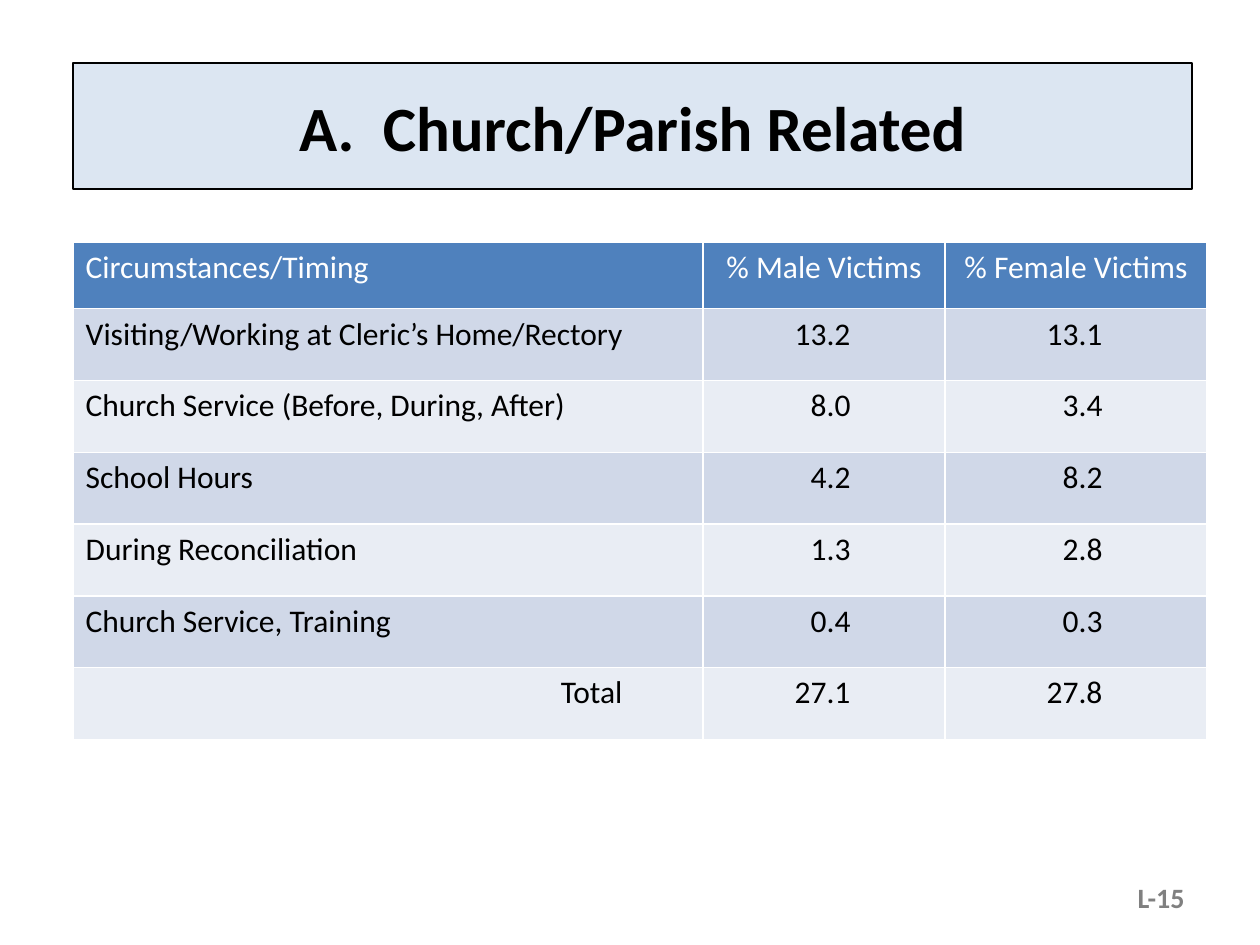
from pptx import Presentation
from pptx.dml.color import RGBColor
from pptx.enum.text import MSO_ANCHOR, PP_ALIGN
from pptx.util import Inches, Pt

LEFT, CENTER, RIGHT = PP_ALIGN.LEFT, PP_ALIGN.CENTER, PP_ALIGN.RIGHT
MIDDLE = MSO_ANCHOR.MIDDLE

FONT = "Calibri"
BLACK, WHITE, GRAY = "000000", "FFFFFF", "808080"
TITLE_FILL, HEADER_FILL = "DCE6F2", "4F81BD"
BAND_FILLS = ("D0D8E8", "E9EDF4")

MARGIN = 0.58
COLUMN_WIDTHS = (5, 1.92, 2.08)
HEADER_HEIGHT, ROW_HEIGHT = 0.53, 0.57
CELL_INSET, TOTAL_INSET = 0.1, 0.64
NUMBER_INSETS = (0.75, 0.83)

HEADERS = ("Circumstances/Timing", "% Male Victims", "% Female Victims")
ROWS = (
    ("Visiting/Working at Cleric’s Home/Rectory", "13.2", "13.1"),
    ("Church Service (Before, During, After)", "8.0", "3.4"),
    ("School Hours", "4.2", "8.2"),
    ("During Reconciliation", "1.3", "2.8"),
    ("Church Service, Training", "0.4", "0.3"),
    ("Total", "27.1", "27.8"),
)


def color(value):
    """Return the colour for a hex string."""
    return RGBColor.from_string(value)


def write(text_frame, text, size, text_color, alignment, bold=False):
    """Fill a text frame with one formatted paragraph."""
    text_frame.text = text
    paragraph = text_frame.paragraphs[0]
    paragraph.alignment = alignment
    paragraph.font.name = FONT
    paragraph.font.size = Pt(size)
    paragraph.font.bold = bold
    paragraph.font.color.rgb = color(text_color)


def format_title(slide, text):
    """Place the title in its outlined box."""
    title = slide.shapes.title
    title.left, title.top = Inches(MARGIN), Inches(0.5)
    title.width, title.height = Inches(8.88), Inches(1)
    title.fill.solid()
    title.fill.fore_color.rgb = color(TITLE_FILL)
    title.line.color.rgb = color(BLACK)
    title.line.width = Pt(1.5)
    title.text_frame.vertical_anchor = MIDDLE
    write(title.text_frame, text, 36, BLACK, CENTER, bold=True)


def fill_cell(cell, text, fill, text_color, alignment, inset=CELL_INSET):
    """Write one table cell with its fill and right inset."""
    cell.fill.solid()
    cell.fill.fore_color.rgb = color(fill)
    cell.margin_right = Inches(inset)
    write(cell.text_frame, text, 18, text_color, alignment)


def add_victims_table(slide):
    """Add the banded table with numbers aligned on their decimals."""
    height = HEADER_HEIGHT + ROW_HEIGHT * len(ROWS)
    table = slide.shapes.add_table(
        len(ROWS) + 1, len(HEADERS), Inches(MARGIN), Inches(1.92),
        Inches(sum(COLUMN_WIDTHS)), Inches(height)).table
    for column, width in zip(table.columns, COLUMN_WIDTHS):
        column.width = Inches(width)
    for row in table.rows:
        row.height = Inches(ROW_HEIGHT)
    table.rows[0].height = Inches(HEADER_HEIGHT)

    for index, header in enumerate(HEADERS):
        alignment = CENTER if index else LEFT
        fill_cell(table.cell(0, index), header, HEADER_FILL, WHITE, alignment)
    for row_index, (label, *numbers) in enumerate(ROWS, start=1):
        fill = BAND_FILLS[(row_index - 1) % 2]
        is_total = row_index == len(ROWS)
        fill_cell(table.cell(row_index, 0), label, fill, BLACK,
                  RIGHT if is_total else LEFT,
                  TOTAL_INSET if is_total else CELL_INSET)
        for index, (number, inset) in enumerate(zip(numbers, NUMBER_INSETS), start=1):
            fill_cell(table.cell(row_index, index), number, fill, BLACK, RIGHT, inset)


def add_page_label(slide, text):
    """Add the page label at the bottom right."""
    box = slide.shapes.add_textbox(Inches(7.17), Inches(6.92), Inches(2.33), Inches(0.4))
    box.text_frame.word_wrap = True
    box.text_frame.vertical_anchor = MIDDLE
    write(box.text_frame, text, 16, GRAY, RIGHT, bold=True)


def main():
    """Build the slide and save it."""
    presentation = Presentation()
    presentation.slide_width, presentation.slide_height = Inches(10), Inches(7.5)
    slide = presentation.slides.add_slide(presentation.slide_layouts[5])
    format_title(slide, "A.  Church/Parish Related")
    add_victims_table(slide)
    add_page_label(slide, "L-15")
    presentation.save("out.pptx")


if __name__ == "__main__":
    main()
